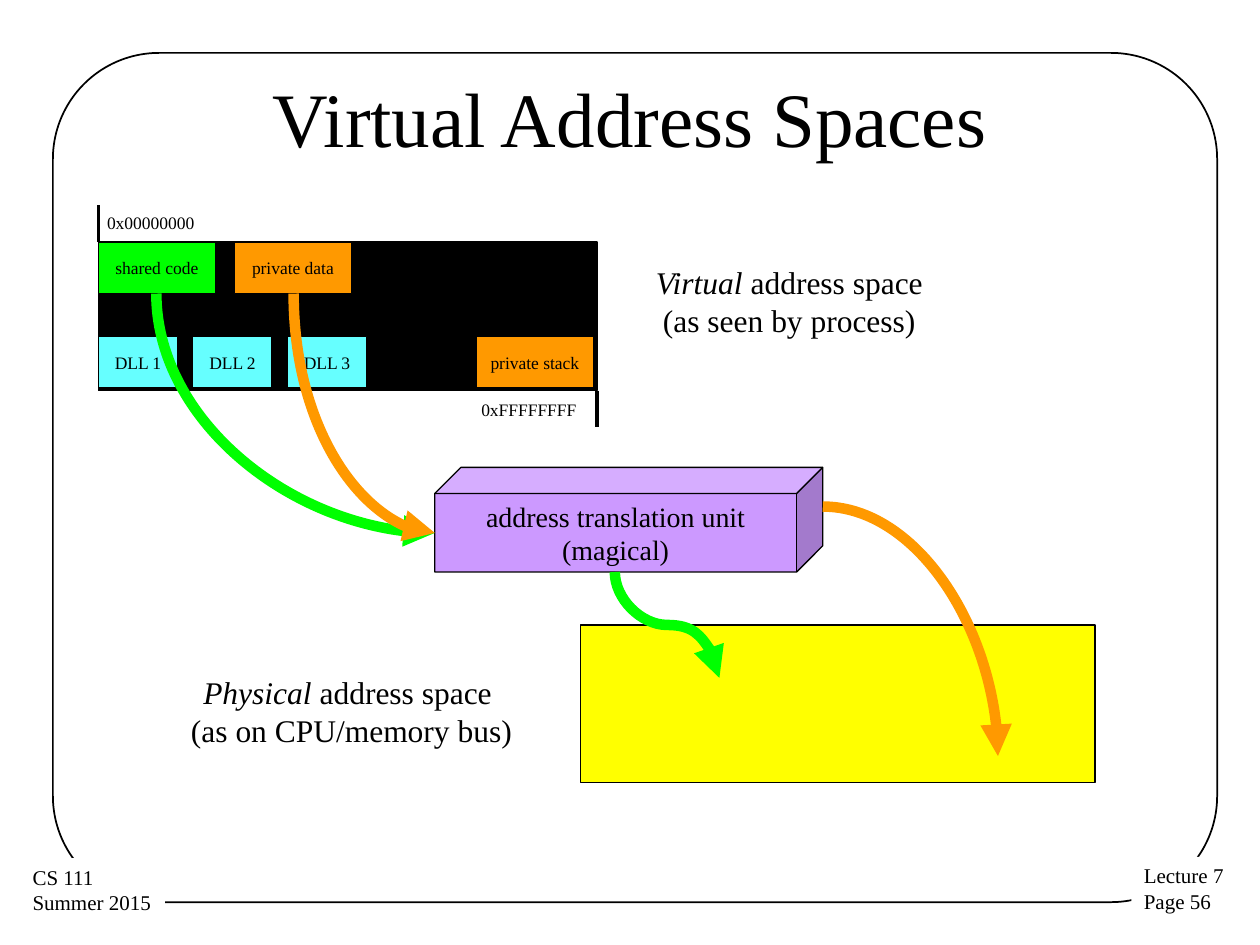
from lxml.etree import SubElement
from pptx import Presentation
from pptx.dml.color import RGBColor
from pptx.enum.shapes import MSO_CONNECTOR, MSO_SHAPE
from pptx.enum.text import MSO_ANCHOR, MSO_AUTO_SIZE, PP_ALIGN
from pptx.oxml.ns import qn
from pptx.util import Pt

EMU_PER_PX = 9144
FONT = "Times New Roman"
BLACK, WHITE, YELLOW = "000000", "FFFFFF", "FFFF00"
GREEN, ORANGE, CYAN, PURPLE = "00FF00", "FF9900", "66FFFF", "CC99FF"


def px(length):
    return round(length * EMU_PER_PX)


def color(value):
    return RGBColor.from_string(value)


def set_font(paragraph, size):
    paragraph.font.name = FONT
    paragraph.font.size = Pt(size)
    paragraph.font.color.rgb = color(BLACK)


def write_lines(frame, lines, size, align):
    frame.word_wrap = False
    for index, line in enumerate(lines):
        paragraph = frame.paragraphs[0] if index == 0 else frame.add_paragraph()
        paragraph.alignment = align
        set_font(paragraph, size)
        for words, italic in line if isinstance(line, list) else [(line, None)]:
            run = paragraph.add_run()
            run.text = words
            run.font.italic = italic


def add_block(slide, box, fill, lines=(), size=10, kind=MSO_SHAPE.RECTANGLE, line_width=0.75):
    block = slide.shapes.add_shape(kind, *map(px, box))
    block.shadow.inherit = False
    if fill:
        block.fill.solid()
        block.fill.fore_color.rgb = color(fill)
    else:
        block.fill.background()
    block.line.color.rgb = color(BLACK)
    block.line.width = Pt(line_width)
    block.text_frame.vertical_anchor = MSO_ANCHOR.MIDDLE
    write_lines(block.text_frame, lines, size, PP_ALIGN.CENTER)
    return block


def add_label(slide, box, lines, size, align=PP_ALIGN.LEFT, margin=None, fill=None):
    label = slide.shapes.add_textbox(*map(px, box))
    frame = label.text_frame
    frame.auto_size = MSO_AUTO_SIZE.SHAPE_TO_FIT_TEXT
    if margin is not None:
        frame.margin_left = frame.margin_right = px(margin)
        frame.margin_top = frame.margin_bottom = px(margin)
    if fill:
        label.fill.solid()
        label.fill.fore_color.rgb = color(fill)
    write_lines(frame, lines, size, align)


def add_line(slide, start, end, stroke=BLACK, width=0, kind=MSO_CONNECTOR.STRAIGHT):
    line = slide.shapes.add_connector(kind, *map(px, start + end))
    line.line.color.rgb = color(stroke)
    line.line.width = Pt(width)
    SubElement(line._element.spPr, qn("a:effectLst"))
    return line


def add_curve(slide, start, end, stroke, preset="curvedConnector2", downward=True):
    curve = add_line(slide, start, end, stroke, 6, MSO_CONNECTOR.CURVE)
    properties = curve._element.spPr
    properties.find(qn("a:prstGeom")).set("prst", preset)
    SubElement(properties.find(qn("a:ln")), qn("a:tailEnd"), type="triangle")
    if downward:
        width, height = end[0] - start[0], end[1] - start[1]
        curve.left = px(start[0] + (width - height) / 2)
        curve.top = px(start[1] + (height - width) / 2)
        curve.width, curve.height = px(height), px(width)
        transform = properties.find(qn("a:xfrm"))
        transform.set("rot", "16200000")
        transform.set("flipH", "1")


def add_page_frame(slide, box):
    left, top, width, height = box
    border = add_block(slide, box, None, kind=MSO_SHAPE.ROUNDED_RECTANGLE, line_width=1)
    border.adjustments[0] = 0.125
    add_label(slide, (left + 856, top + 638, 84, 51), ["Lecture 7", "Page 56"], 12, fill=WHITE)
    add_label(slide, (left - 26, top + 639, 115, 51), ["CS 111", "Summer 2015"], 12, fill=WHITE)


def add_title(slide, box, words):
    title = slide.shapes.title
    title.left, title.top, title.width, title.height = map(px, box)
    title.text_frame.text = words
    title.text_frame.vertical_anchor = MSO_ANCHOR.MIDDLE
    title.text_frame.paragraphs[0].alignment = PP_ALIGN.CENTER
    set_font(title.text_frame.paragraphs[0], 44)


def add_virtual_space(slide, box):
    left, top, width, height = box
    right, bottom = left + width, top + height
    add_block(slide, box, BLACK)
    add_line(slide, (left, top - 29), (left, top))
    add_line(slide, (right, bottom), (right, bottom + 29))
    add_label(slide, (left + 7, top - 24, 70, 17), ["0x00000000"], 10, margin=0)
    add_label(slide, (right - 92, bottom + 7, 77, 17), ["0xFFFFFFFF"], 10, margin=0)
    segments = [
        ("shared code", 0, 0, 93, GREEN),
        ("private data", 108, 0, 93, ORANGE),
        ("private stack", 300, 75, 93, ORANGE),
    ] + [(f"DLL {n + 1}", 75 * n, 75, 63, CYAN) for n in range(3)]
    for name, x, y, segment_width, fill in segments:
        add_block(slide, (left + x, top + y, segment_width, 41), fill, [name])
    add_label(slide, (right + 34, top + 12, 237, 71),
              [[("Virtual ", True), ("address space ", False)], "(as seen by process)"],
              18, PP_ALIGN.CENTER)


def add_physical_space(slide, box):
    left, top, width, height = box
    add_block(slide, box, YELLOW)
    add_label(slide, (left - 321, top + 33, 278, 71),
              [[("Physical ", True), ("address space ", False)], "(as on CPU/memory bus)"],
              18, PP_ALIGN.CENTER)


def add_translation_unit(slide, box):
    left, top, width, height = box
    add_block(slide, box, PURPLE, ["address translation unit", "(magical)"], 16, MSO_SHAPE.CUBE)
    entry = (left, top + 52)
    add_curve(slide, (left - 221, top - 138), entry, GREEN)
    add_curve(slide, (left + 143, top + height), (left + 226, top + 167), GREEN, "curvedConnector3")
    add_curve(slide, (left - 112, top - 138), entry, ORANGE)
    add_curve(slide, (left + width, top + 31), (left + 447, top + 229), ORANGE, downward=False)


def main():
    presentation = Presentation()
    presentation.slide_width, presentation.slide_height = px(1000), px(750)
    slide = presentation.slides.add_slide(presentation.slide_layouts[5])
    add_page_frame(slide, (42, 42, 924, 674))
    add_title(slide, (50, 30, 900, 125), "Virtual Address Spaces")
    add_virtual_space(slide, (78, 192, 396, 118))
    add_physical_space(slide, (461, 496, 408, 125))
    add_translation_unit(slide, (345, 371, 308, 83))
    presentation.save("out.pptx")


if __name__ == "__main__":
    main()
